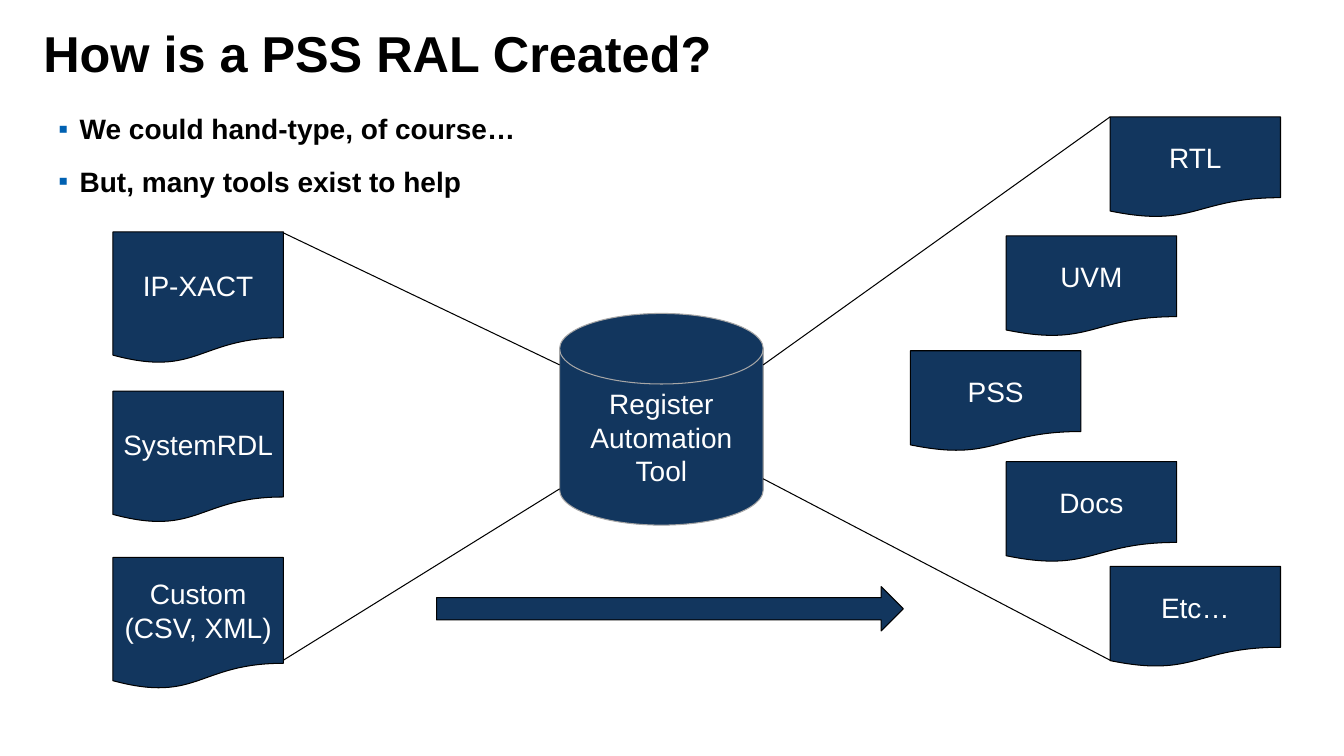
from dataclasses import dataclass

from lxml import etree
from pptx import Presentation
from pptx.dml.color import RGBColor
from pptx.enum.shapes import MSO_CONNECTOR, MSO_SHAPE
from pptx.enum.text import MSO_ANCHOR, PP_ALIGN
from pptx.oxml.ns import qn
from pptx.util import Inches, Pt

DOCUMENT = MSO_SHAPE.FLOWCHART_DOCUMENT
DISK = MSO_SHAPE.FLOWCHART_MAGNETIC_DISK
ARROW = MSO_SHAPE.RIGHT_ARROW
STRAIGHT = MSO_CONNECTOR.STRAIGHT
TOP, MIDDLE = MSO_ANCHOR.TOP, MSO_ANCHOR.MIDDLE
CENTER = PP_ALIGN.CENTER


@dataclass(frozen=True)
class Theme:
    font: str = "Arial"
    title_size: float = 36
    text_size: float = 20
    bullet_gap: float = 13.5
    line_width: float = 0.75
    navy: str = "12365E"
    bullet: str = "0061B2"
    black: str = "000000"
    white: str = "FFFFFF"
    gray: str = "A6A6A6"


THEME = Theme()

TITLE = "How is a PSS RAL Created?"
BULLETS = ["We could hand-type, of course…", "But, many tools exist to help"]
INPUTS = [("IP-XACT", 2.3), ("SystemRDL", 3.88), ("Custom\n(CSV, XML)", 5.53)]
OUTPUTS = [
    ("RTL", 11.01, 1.16),
    ("UVM", 9.98, 2.34),
    ("PSS", 9.03, 3.48),
    ("Docs", 9.98, 4.58),
    ("Etc…", 11.01, 5.62),
]
TOOL = "Register\nAutomation\nTool"

DOCUMENT_WIDTH = 1.69
INPUT_LEFT, INPUT_HEIGHT, OUTPUT_HEIGHT = 1.12, 1.31, 1
TOOL_BOX = (5.55, 3.11, 2.02, 2.1)
ARROW_BOX = (4.33, 5.82, 4.63, 0.44)

INPUT_RIGHT = INPUT_LEFT + DOCUMENT_WIDTH
OUTPUT_LEFT = OUTPUTS[0][1]
TOOL_LEFT, TOOL_RIGHT = TOOL_BOX[0], TOOL_BOX[0] + TOOL_BOX[2]
FUNNEL_LINES = [
    (INPUT_RIGHT, 2.31, TOOL_LEFT, 3.62),
    (INPUT_RIGHT, 6.55, TOOL_LEFT, 4.85),
    (TOOL_RIGHT, 3.62, OUTPUT_LEFT, 1.16),
    (TOOL_RIGHT, 4.75, OUTPUT_LEFT, 6.55),
]


def color(value):
    return RGBColor.from_string(value)


def style_text(text_frame, size, text_color, bold=False):
    for paragraph in text_frame.paragraphs:
        for run in paragraph.runs:
            run.font.name = THEME.font
            run.font.size = Pt(size)
            run.font.bold = bold
            run.font.color.rgb = color(text_color)


def add_text(slide, box, text, size, anchor):
    text_frame = slide.shapes.add_textbox(*map(Inches, box)).text_frame
    text_frame.word_wrap = True
    text_frame.vertical_anchor = anchor
    text_frame.margin_left = text_frame.margin_right = 0
    text_frame.text = text
    style_text(text_frame, size, THEME.black, bold=True)
    return text_frame


def add_bullet(paragraph):
    properties = paragraph._p.get_or_add_pPr()
    properties.set("marL", str(Inches(0.21)))
    properties.set("indent", str(Inches(-0.21)))
    bullet_color = etree.SubElement(properties, qn("a:buClr"))
    etree.SubElement(bullet_color, qn("a:srgbClr"), val=THEME.bullet)
    etree.SubElement(properties, qn("a:buFont"), typeface=THEME.font)
    etree.SubElement(properties, qn("a:buChar"), char="▪")


def add_figure(slide, kind, box, text="", line_color=THEME.black):
    shape = slide.shapes.add_shape(kind, *map(Inches, box))
    shape.shadow.inherit = False
    shape.fill.solid()
    shape.fill.fore_color.rgb = color(THEME.navy)
    shape.line.color.rgb = color(line_color)
    shape.line.width = Pt(THEME.line_width)
    if text:
        text_frame = shape.text_frame
        text_frame.word_wrap = False
        text_frame.vertical_anchor = MIDDLE
        text_frame.text = text
        for paragraph in text_frame.paragraphs:
            paragraph.alignment = CENTER
        style_text(text_frame, THEME.text_size, THEME.white)


def add_line(slide, ends):
    connector = slide.shapes.add_connector(STRAIGHT, *map(Inches, ends))
    connector.line.color.rgb = color(THEME.black)
    connector.line.width = Pt(THEME.line_width)
    etree.SubElement(connector._element.spPr, qn("a:effectLst"))


def main():
    presentation = Presentation()
    presentation.slide_width = Inches(13.33)
    presentation.slide_height = Inches(7.5)
    slide = presentation.slides.add_slide(presentation.slide_layouts[6])

    title = add_text(slide, (0.43, 0.22, 12.43, 0.66), TITLE, THEME.title_size, MIDDLE)
    title.paragraphs[0].line_spacing = 0.95

    body = add_text(slide, (0.58, 1.06, 12.43, 5.38), "\n".join(BULLETS), THEME.text_size, TOP)
    for index, paragraph in enumerate(body.paragraphs):
        add_bullet(paragraph)
        paragraph.space_before = Pt(THEME.bullet_gap if index else 0)

    for name, top in INPUTS:
        add_figure(slide, DOCUMENT, (INPUT_LEFT, top, DOCUMENT_WIDTH, INPUT_HEIGHT), name)
    add_figure(slide, DISK, TOOL_BOX, TOOL, THEME.gray)
    for name, left, top in OUTPUTS:
        add_figure(slide, DOCUMENT, (left, top, DOCUMENT_WIDTH, OUTPUT_HEIGHT), name)
    for ends in FUNNEL_LINES:
        add_line(slide, ends)
    add_figure(slide, ARROW, ARROW_BOX)

    presentation.save("out.pptx")


if __name__ == "__main__":
    main()
